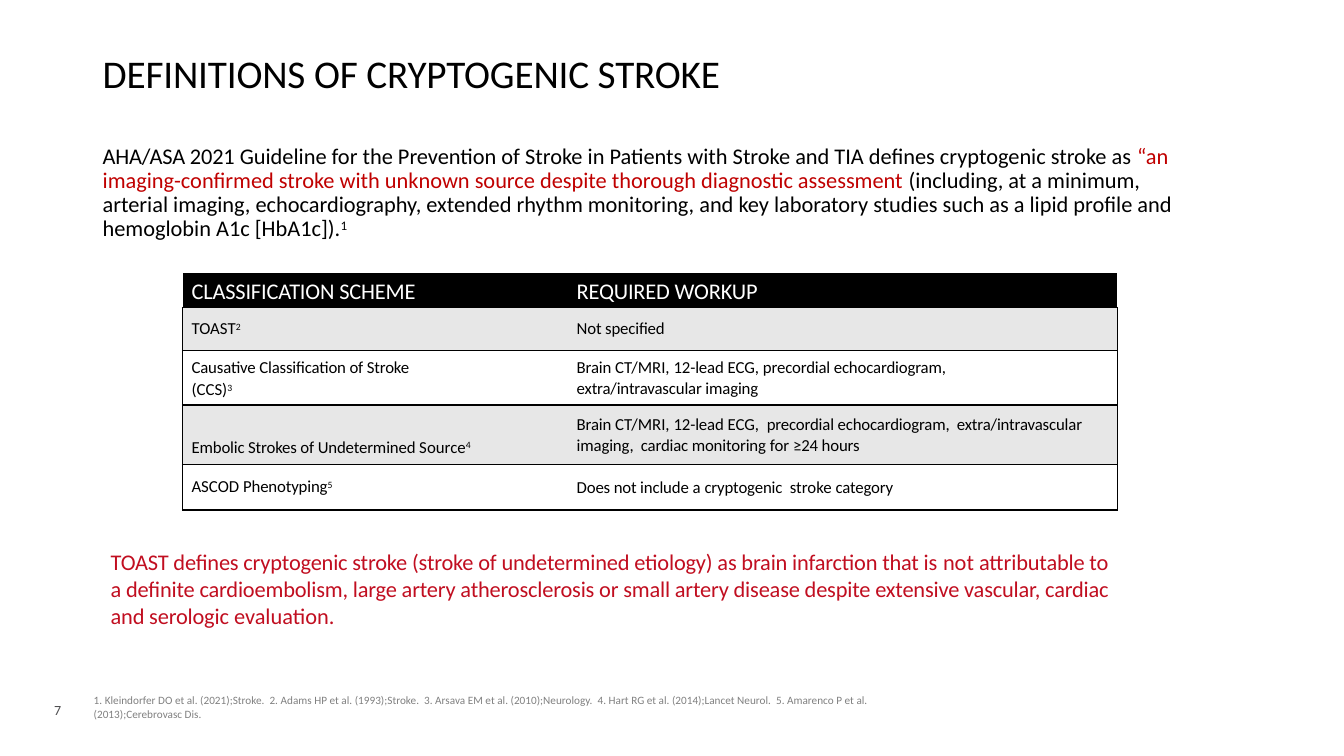
"""Build a slide that defines cryptogenic stroke and compares classification schemes."""
import lxml.etree
import pptx
import pptx.dml.color
import pptx.enum.text
import pptx.oxml.ns
import pptx.util
from dataclasses import dataclass

Inches = pptx.util.Inches
Pt = pptx.util.Pt
Anchor = pptx.enum.text.MSO_ANCHOR


@dataclass(frozen=True)
class Theme:
    font: str = "Calibri"
    black: str = "000000"
    white: str = "FFFFFF"
    band: str = "E7E7E7"
    quote: str = "C00000"
    red: str = "C10E20"
    gray: str = "808080"
    dark_gray: str = "4D4D4F"
    title: int = 28
    body: int = 16
    cell: int = 12
    number: int = 10
    note: int = 8
    line: int = 1


THEME = Theme()
SLIDE_SIZE = (13.33, 7.5)
PLAIN, TIGHT, QUOTE, SUPER = "plain", "tight", "quote", "super"

TITLE = [("DEFINITIONS OF CRYPTOGENIC STROKE", TIGHT)]
GUIDELINE = [
    ("AHA/ASA 2021 ", TIGHT),
    ("Guideline for the Prevention of Stroke in Patients with Stroke and TIA "
     "defines cryptogenic stroke as ", PLAIN),
    ("“an imaging-confirmed stroke with unknown source despite thorough "
     "diagnostic assessment", QUOTE),
    (" (including, at a minimum, arterial imaging, echocardiography, extended "
     "rhythm monitoring, and key laboratory studies such as a lipid profile and "
     "hemoglobin A1c [HbA1c]).", PLAIN),
    ("1", SUPER),
]
TOAST = [
    ("TOAST defines cryptogenic stroke (stroke of undetermined etiology) as brain "
     "infarction that is ", TIGHT),
    ("not ", PLAIN),
    ("attributable to a definite cardioembolism, large artery atherosclerosis or "
     "small artery disease despite extensive vascular, cardiac and serologic ", TIGHT),
    ("evaluation.", PLAIN),
]
REFERENCES = [
    ("1. Kleindorfer DO et al. (2021);Stroke.  2. Adams HP et al. (1993);Stroke.  "
     "3. Arsava EM et al. (2010);Neurology.  4. Hart RG et al. (2014);Lancet Neurol.  "
     "5. Amarenco P et al. (2013);Cerebrovasc Dis.", PLAIN),
]
NUMBER = [("7", PLAIN)]
BRAIN_SCAN = [("Brain ", TIGHT), ("CT/MRI, ", PLAIN), ("12-lead ", TIGHT)]
SCHEMES = [
    ([[("CLASSIFICATION SCHEME", TIGHT)]], [[("REQUIRED WORKUP", TIGHT)]]),
    ([[("TOAST", PLAIN), ("2", SUPER)]], [[("Not specified", TIGHT)]]),
    ([[("Causative Classification of Stroke", TIGHT)],
      [("(CCS)", PLAIN), ("3", SUPER)]],
     [BRAIN_SCAN + [("ECG, ", PLAIN), ("precordial echocardiogram,", TIGHT)],
      [("extra/intravascular imaging", TIGHT)]]),
    ([[("Embolic Strokes of Undetermined S", TIGHT), ("ource", PLAIN), ("4", SUPER)]],
     [BRAIN_SCAN + [("ECG,  ", PLAIN),
                    ("precordial echocardiogram,  extra/intravascular imaging,  "
                     "cardiac monitoring ", TIGHT),
                    ("for ", PLAIN), ("≥24 hours", TIGHT)]]),
    ([[("ASCOD ", PLAIN), ("Phenotyping", TIGHT), ("5", SUPER)]],
     [[("Does not include ", TIGHT), ("a ", PLAIN), ("cryptogenic  ", TIGHT),
       ("stroke ", PLAIN), ("category", TIGHT)]]),
]

# Percentages of the slide's width and height
NUMBER_AREA = (3.3, 92.13, 2.93, 3.6)
TITLE_AREA = (6.9, 5.33, 86.27, 8.13)
GUIDELINE_AREA = (6.9, 18.53, 82.6, 48.93)
TOAST_AREA = (7.5, 71.87, 76.67, 16.13)
REFERENCE_AREA = (6.9, 91.73, 59.71, 3.6)
TABLE_CORNER = (13.58, 36.13)
COLUMN_SHARES = (28.28, 41.26)
ROW_SHARES = (4.53, 5.73, 7.2, 7.87, 6)
CELL_INDENTS = (0.09, 0.14)
SCHEME_ROW_SPACING = {(2, 0): 15.9, (2, 1): 15.1, (3, 0): 15.1, (3, 1): 15.1, (4, 1): 15.1}
LOW_CELL = (3, 0)


def across(share):
    return Inches(SLIDE_SIZE[0] * share / 100)


def down(share):
    return Inches(SLIDE_SIZE[1] * share / 100)


def color(value):
    return pptx.dml.color.RGBColor.from_string(value)


def write(paragraph, pieces, size, text_color, raise_by="30000"):
    for text, style in pieces:
        run = paragraph.add_run()
        run.text = text
        run.font.name = THEME.font
        run.font.size = Pt(size)
        run.font.color.rgb = color(THEME.quote if style == QUOTE else text_color)
        properties = run._r.get_or_add_rPr()
        if style == TIGHT:
            properties.set("spc", "-10")
        if style == SUPER:
            properties.set("baseline", raise_by)


def add_text(slide, area, pieces, size, text_color, spacing=1.0, anchor=Anchor.TOP,
             wrap=True, margins=None):
    left, top, width, height = area
    box = slide.shapes.add_textbox(across(left), down(top), across(width), down(height))
    frame = box.text_frame
    frame.word_wrap = wrap
    frame.vertical_anchor = anchor
    if margins:
        (frame.margin_left, frame.margin_top,
         frame.margin_right, frame.margin_bottom) = map(Inches, margins)
    frame.paragraphs[0].line_spacing = spacing
    write(frame.paragraphs[0], pieces, size, text_color)


def set_borders(cell, visible):
    properties = cell._tc.get_or_add_tcPr()
    qualified = pptx.oxml.ns.qn
    for side in "LRTB":
        line = lxml.etree.SubElement(properties, qualified(f"a:ln{side}"),
                                     w=str(Pt(THEME.line)))
        if side in visible:
            fill = lxml.etree.SubElement(line, qualified("a:solidFill"))
            lxml.etree.SubElement(fill, qualified("a:srgbClr"), val=THEME.black)
        else:
            lxml.etree.SubElement(line, qualified("a:noFill"))


def fill_cell(cell, row, column, paragraphs):
    header = row == 0
    set_borders(cell, "" if header else "TB" + "LR"[column])
    cell.fill.solid()
    cell.fill.fore_color.rgb = color(
        THEME.black if header else THEME.band if row % 2 else THEME.white)
    cell.margin_left = Inches(CELL_INDENTS[column])
    cell.margin_right = 0
    cell.margin_top = Inches(0.05 if header else 0)
    cell.margin_bottom = Inches(0.07 if (row, column) == LOW_CELL else 0)
    cell.vertical_anchor = (Anchor.TOP if header else
                            Anchor.BOTTOM if (row, column) == LOW_CELL else Anchor.MIDDLE)
    frame = cell.text_frame
    for index, pieces in enumerate(paragraphs):
        paragraph = frame.add_paragraph() if index else frame.paragraphs[0]
        if (row, column) in SCHEME_ROW_SPACING:
            paragraph.line_spacing = Pt(SCHEME_ROW_SPACING[row, column])
        write(paragraph, pieces, THEME.body if header else THEME.cell,
              THEME.white if header else THEME.black, "25000")


def add_scheme_table(slide):
    left, top = TABLE_CORNER
    table = slide.shapes.add_table(
        len(ROW_SHARES), len(COLUMN_SHARES), across(left), down(top),
        across(sum(COLUMN_SHARES)), down(sum(ROW_SHARES))).table
    for column, share in zip(table.columns, COLUMN_SHARES):
        column.width = across(share)
    for row, share in zip(table.rows, ROW_SHARES):
        row.height = down(share)
    for row, cells in enumerate(SCHEMES):
        for column, paragraphs in enumerate(cells):
            fill_cell(table.cell(row, column), row, column, paragraphs)


def main():
    presentation = pptx.Presentation()
    presentation.slide_width, presentation.slide_height = map(Inches, SLIDE_SIZE)
    slide = presentation.slides.add_slide(presentation.slide_layouts[6])
    add_text(slide, NUMBER_AREA, NUMBER, THEME.number, THEME.dark_gray, wrap=False)
    add_text(slide, TITLE_AREA, TITLE, THEME.title, THEME.black, 0.9, Anchor.BOTTOM)
    add_text(slide, GUIDELINE_AREA, GUIDELINE, THEME.body, THEME.black, 0.9)
    add_scheme_table(slide)
    add_text(slide, TOAST_AREA, TOAST, THEME.body, THEME.red)
    add_text(slide, REFERENCE_AREA, REFERENCES, THEME.note, THEME.gray,
             margins=(0.01, 0, 0, 0))
    presentation.save("out.pptx")


if __name__ == "__main__":
    main()
